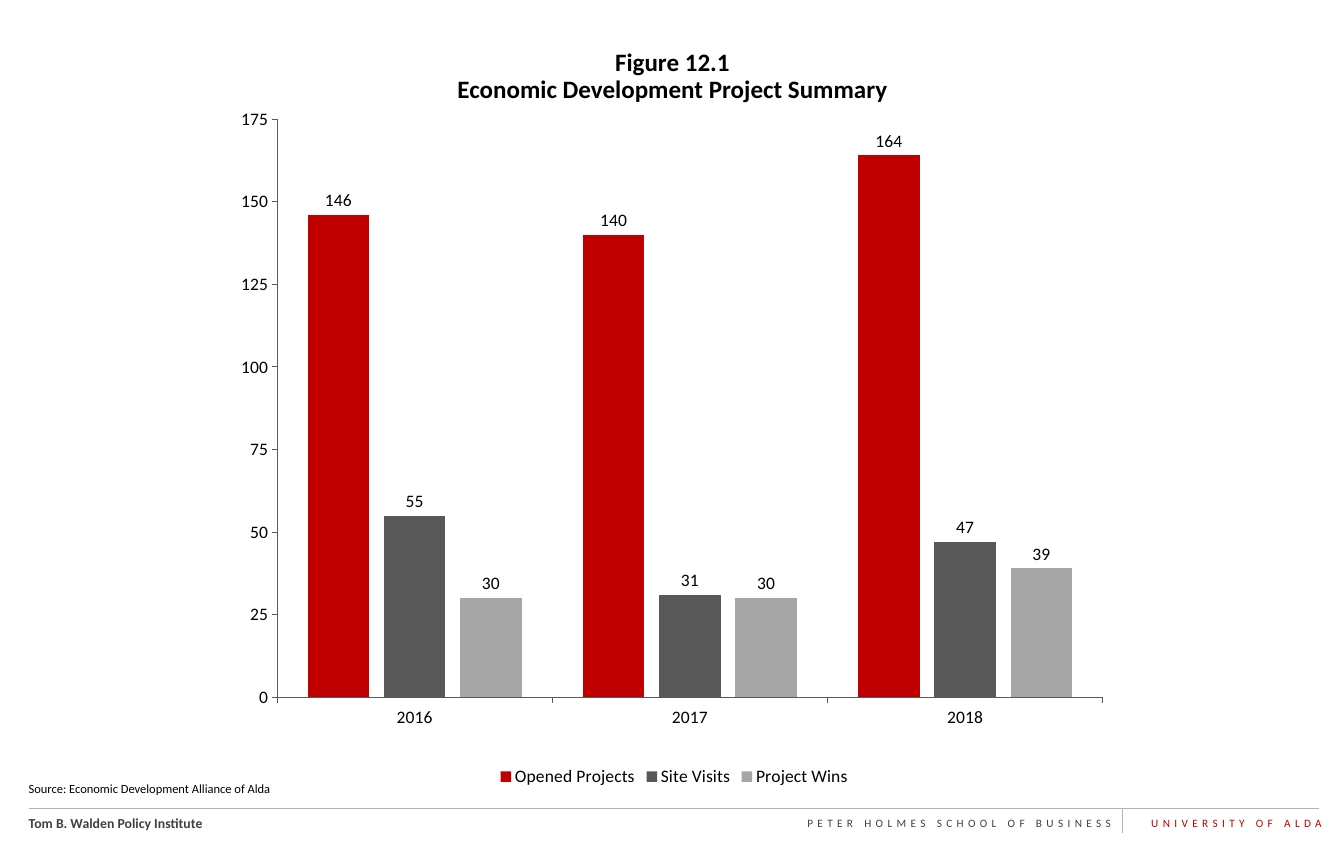
from dataclasses import dataclass, field
from typing import Any

from lxml.etree import Element, SubElement
from pptx import Presentation
from pptx.chart.chart import Chart
from pptx.chart.data import CategoryChartData
from pptx.dml.color import RGBColor as Rgb
from pptx.enum.chart import (XL_CHART_TYPE as ChartType, XL_LABEL_POSITION as LabelPos,
                             XL_LEGEND_POSITION as LegendPos, XL_TICK_MARK as Tick)
from pptx.enum.shapes import MSO_CONNECTOR as Connector
from pptx.enum.text import MSO_AUTO_SIZE as AutoSize, PP_ALIGN as Align
from pptx.oxml.ns import qn
from pptx.slide import Slide
from pptx.util import Pt


@dataclass(frozen=True)
class Theme:
    font: str = "Calibri"
    black: Rgb = Rgb(0, 0, 0)
    red: Rgb = Rgb(0xC0, 0, 0)
    footer_gray: Rgb = Rgb(0x40, 0x40, 0x40)
    rule_gray: Rgb = Rgb(0xB3, 0xB3, 0xB3)
    dark_gray: Rgb = Rgb(0x59, 0x59, 0x59)
    light_gray: Rgb = Rgb(0xA6, 0xA6, 0xA6)
    title_size: float = 20
    chart_size: float = 14
    institute_size: float = 11
    source_size: float = 10
    school_size: float = 9
    line_width: float = 0.75


THEME = Theme()


@dataclass(frozen=True)
class Label:
    text: str
    box: tuple[float, float, float, float]
    size: float
    color: Rgb = THEME.black
    bold: bool = False
    tracking: float = 0
    paragraph: dict[str, Any] = field(default_factory=dict)


@dataclass(frozen=True)
class Rule:
    start: tuple[float, float]
    end: tuple[float, float]


@dataclass(frozen=True)
class Measure:
    name: str
    counts: tuple[int, ...]
    color: Rgb


RIGHT = {"alignment": Align.RIGHT}
LABELS = (
    Label("Tom B. Walden Policy Institute", (15.84, 648, 340, 20.88),
          THEME.institute_size, THEME.footer_gray, bold=True),
    Label("PETER HOLMES SCHOOL OF BUSINESS", (545, 649.44, 350.5, 18),
          THEME.school_size, THEME.footer_gray, tracking=3.5, paragraph=RIGHT),
    Label("UNIVERSITY OF ALDA", (900, 649.44, 164.2, 18),
          THEME.school_size, THEME.red, tracking=3.5, paragraph=RIGHT),
    Label("Source: Economic Development Alliance of Alda", (15.84, 621.36, 432, 19.44),
          THEME.source_size),
    Label("Figure 12.1\vEconomic Development Project Summary", (177.84, 36, 720, 43.92),
          THEME.title_size, bold=True,
          paragraph={"alignment": Align.CENTER, "line_spacing": 0.9}),
)
RULES = (
    Rule((23.04, 646.56), (1054.8, 646.56)),
    Rule((897.84, 646.56), (897.84, 666)),
)
YEARS = ("2016", "2017", "2018")
MEASURES = (
    Measure("Opened Projects", (146, 140, 164), THEME.red),
    Measure("Site Visits", (55, 31, 47), THEME.dark_gray),
    Measure("Project Wins", (30, 30, 39), THEME.light_gray),
)
CHART_BOX = (180.72, 82.08, 717.12, 550.8)
PLOT_LAYOUT = {"layoutTarget": "inner", "xMode": "edge", "yMode": "edge",
               "x": 0.057, "y": 0.024, "w": 0.921, "h": 0.84}


def apply_format(target: Any, values: dict[str, Any]) -> None:
    for attribute, value in values.items():
        setattr(target, attribute, value)


def style_font(font: Any, size: float, color: Rgb, bold: bool = False) -> None:
    apply_format(font, {"name": THEME.font, "size": Pt(size), "bold": bold})
    font.color.rgb = color


def style_line(line: Any, color: Rgb) -> None:
    line.color.rgb = color
    line.width = Pt(THEME.line_width)


def draw_label(slide: Slide, label: Label) -> None:
    frame = slide.shapes.add_textbox(*map(Pt, label.box)).text_frame
    apply_format(frame, {"word_wrap": True, "auto_size": AutoSize.NONE})
    paragraph = frame.paragraphs[0]
    paragraph.text = label.text
    apply_format(paragraph, label.paragraph)
    for run in paragraph.runs:
        style_font(run.font, label.size, label.color, label.bold)
        if label.tracking:
            run._r.get_or_add_rPr().set("spc", str(round(label.tracking * 100)))


def draw_rule(slide: Slide, rule: Rule) -> None:
    connector = slide.shapes.add_connector(
        Connector.STRAIGHT, *map(Pt, rule.start + rule.end))
    style_line(connector.line, THEME.rule_gray)
    SubElement(connector._element.spPr, qn("a:effectLst"))


def place_plot(chart: Chart) -> None:
    """Fix the inner plot area at set fractions of the chart."""
    plot_area = chart._chartSpace.find(".//" + qn("c:plotArea"))
    for automatic in plot_area.findall(qn("c:layout")):
        plot_area.remove(automatic)
    layout = Element(qn("c:layout"))
    manual = SubElement(layout, qn("c:manualLayout"))
    for tag, value in PLOT_LAYOUT.items():
        SubElement(manual, qn(f"c:{tag}")).set("val", str(value))
    plot_area.insert(0, layout)


def draw_project_chart(slide: Slide) -> None:
    projects = CategoryChartData(number_format="0")
    projects.categories = YEARS
    for measure in MEASURES:
        projects.add_series(measure.name, measure.counts)
    chart = slide.shapes.add_chart(
        ChartType.COLUMN_CLUSTERED, *map(Pt, CHART_BOX), projects).chart
    apply_format(chart, {"has_title": False, "has_legend": True})
    style_font(chart.font, THEME.chart_size, THEME.black)
    apply_format(chart.legend, {"position": LegendPos.BOTTOM, "include_in_layout": False})
    style_font(chart.legend.font, THEME.chart_size, THEME.black)

    for axis in (chart.category_axis, chart.value_axis):
        apply_format(axis, {"has_major_gridlines": False, "major_tick_mark": Tick.OUTSIDE,
                            "minor_tick_mark": Tick.NONE})
        style_font(axis.tick_labels.font, THEME.chart_size, THEME.black)
        style_line(axis.format.line, THEME.dark_gray)
    apply_format(chart.value_axis,
                 {"minimum_scale": 0, "maximum_scale": 175, "major_unit": 25})

    plot = chart.plots[0]
    apply_format(plot, {"gap_width": 100, "overlap": -24, "vary_by_categories": False})
    for series, measure in zip(plot.series, MEASURES):
        series.format.fill.solid()
        series.format.fill.fore_color.rgb = measure.color
        apply_format(series.data_labels,
                     {"show_value": True, "position": LabelPos.OUTSIDE_END})
        style_font(series.data_labels.font, THEME.chart_size, THEME.black)
    place_plot(chart)


def main() -> None:
    deck = Presentation()
    apply_format(deck, {"slide_width": Pt(1074.96), "slide_height": Pt(676.8)})
    slide = deck.slides.add_slide(deck.slide_layouts[6])
    for label in LABELS:
        draw_label(slide, label)
    for rule in RULES:
        draw_rule(slide, rule)
    draw_project_chart(slide)
    deck.save("out.pptx")


if __name__ == "__main__":
    main()
